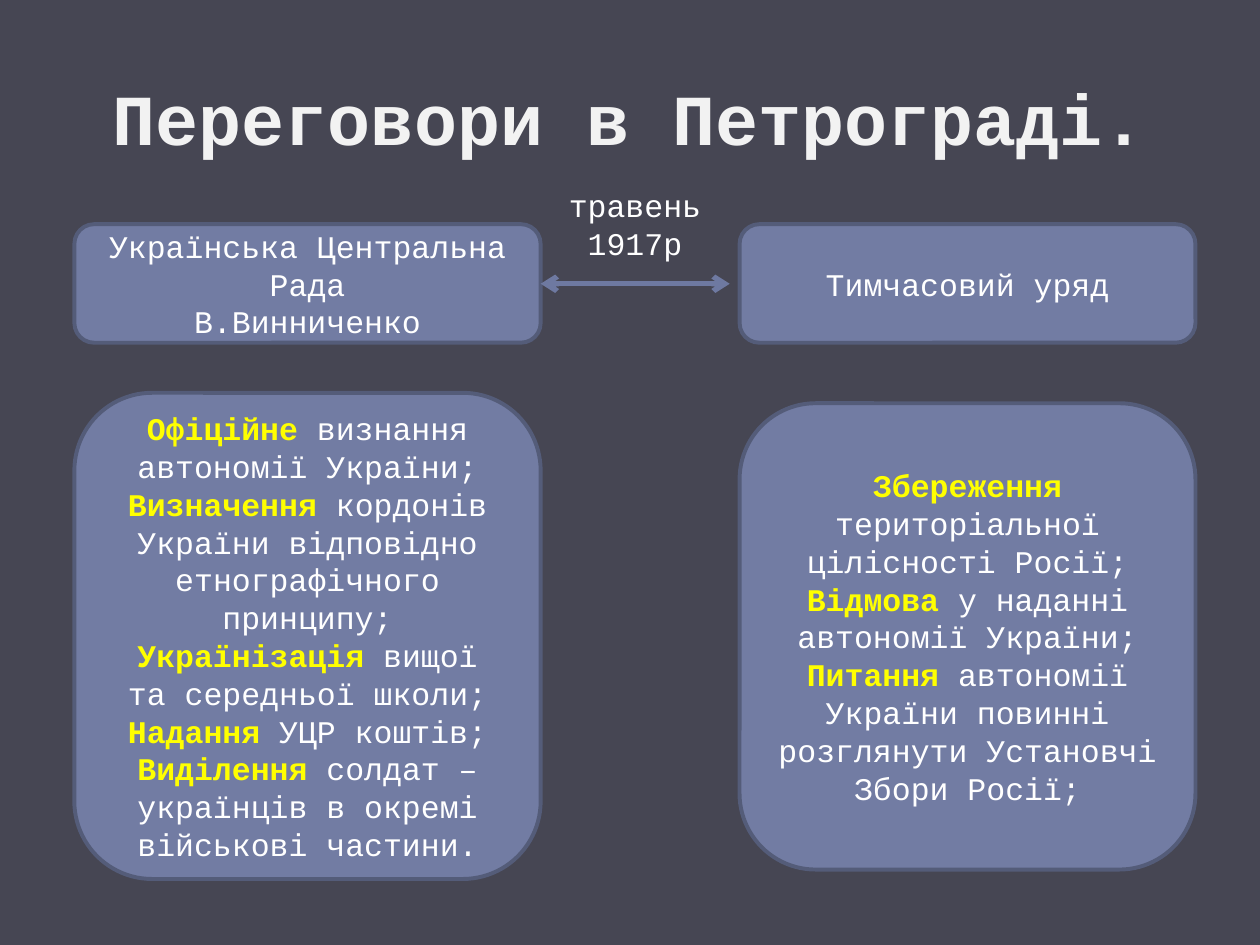
from dataclasses import dataclass

from lxml import etree
from pptx import Presentation
from pptx.dml.color import RGBColor
from pptx.enum.shapes import MSO_CONNECTOR, MSO_SHAPE
from pptx.enum.text import MSO_ANCHOR, PP_ALIGN
from pptx.oxml.ns import qn
from pptx.shapes.base import BaseShape
from pptx.slide import Slide
from pptx.util import Cm, Pt

ROUNDED = MSO_SHAPE.ROUNDED_RECTANGLE
STRAIGHT = MSO_CONNECTOR.STRAIGHT
MIDDLE = MSO_ANCHOR.MIDDLE
TOP = MSO_ANCHOR.TOP
CENTER = PP_ALIGN.CENTER

FONT = "Courier New"
BACKGROUND = "464653"
PANEL_FILL = "727CA3"
PANEL_LINE = "545C79"
ARROW = "6E79A1"
TITLE = "F2F2F2"
WHITE = "FFFFFF"
YELLOW = "FFFF00"


@dataclass(frozen=True)
class Span:
    text: str
    color: str = WHITE
    bold: bool = False
    size: float = 18


@dataclass(frozen=True)
class Area:
    left: float
    top: float
    width: float
    height: float

    def lengths(self) -> tuple[Cm, Cm, Cm, Cm]:
        return Cm(self.left), Cm(self.top), Cm(self.width), Cm(self.height)


@dataclass(frozen=True)
class Panel:
    area: Area
    lines: list[list[Span]]


def rgb(color: str) -> RGBColor:
    return RGBColor.from_string(color)


def demand(lead: str, rest: str) -> list[Span]:
    return [Span(lead, YELLOW, True), Span(rest)]


def write(box: BaseShape, lines: list[list[Span]], anchor: MSO_ANCHOR) -> None:
    frame = box.text_frame
    frame.word_wrap = True
    frame.vertical_anchor = anchor
    for index, line in enumerate(lines):
        para = frame.add_paragraph() if index else frame.paragraphs[0]
        para.alignment = CENTER
        for span in line:
            run = para.add_run()
            run.text = span.text
            run.font.name = FONT
            run.font.size = Pt(span.size)
            run.font.bold = span.bold
            run.font.color.rgb = rgb(span.color)


def add_label(page: Slide, area: Area, span: Span, anchor: MSO_ANCHOR) -> None:
    write(page.shapes.add_textbox(*area.lengths()), [[span]], anchor)


def add_panel(page: Slide, panel: Panel) -> None:
    box = page.shapes.add_shape(ROUNDED, *panel.area.lengths())
    box.shadow.inherit = False
    box.fill.solid()
    box.fill.fore_color.rgb = rgb(PANEL_FILL)
    box.line.color.rgb = rgb(PANEL_LINE)
    box.line.width = Pt(2.25)
    write(box, panel.lines, MIDDLE)


def add_double_arrow(page: Slide, start: float, end: float, height: float) -> None:
    arrow = page.shapes.add_connector(STRAIGHT, Cm(start), Cm(height), Cm(end), Cm(height))
    arrow.line.color.rgb = rgb(ARROW)
    arrow.line.width = Pt(3)
    outline = arrow.line._get_or_add_ln()
    for tip in ("a:headEnd", "a:tailEnd"):
        etree.SubElement(outline, qn(tip), type="arrow")
    etree.SubElement(arrow._element.spPr, qn("a:effectLst"))


LEFT, LEFT_WIDTH = 1.5, 9.4
RIGHT, RIGHT_WIDTH = 14.91, 9.19
PARTY_TOP, PARTY_HEIGHT = 4.52, 2.39

PANELS = [
    Panel(
        Area(LEFT, PARTY_TOP, LEFT_WIDTH, PARTY_HEIGHT),
        [[Span("Українська Центральна Рада")], [Span("В.Винниченко")]],
    ),
    Panel(
        Area(RIGHT, PARTY_TOP, RIGHT_WIDTH, PARTY_HEIGHT),
        [[Span("Тимчасовий уряд")]],
    ),
    Panel(
        Area(LEFT, 7.92, LEFT_WIDTH, 9.8),
        [
            demand("Офіційне", " визнання автономії України;"),
            demand("Визначення", " кордонів України відповідно етнографічного принципу;"),
            demand("Українізація", " вищої та середньої школи;"),
            demand("Надання", " УЦР коштів;"),
            demand("Виділення", " солдат – українців в окремі військові частини."),
        ],
    ),
    Panel(
        Area(RIGHT, 8.13, RIGHT_WIDTH, 9.4),
        [
            demand("Збереження ", "територіальної цілісності Росії;"),
            demand("Відмова ", "у наданні автономії України;"),
            demand("Питання", " автономії України повинні розглянути Установчі Збори Росії;"),
        ],
    ),
]


def main() -> None:
    deck = Presentation()
    deck.slide_width, deck.slide_height = Cm(25.4), Cm(19.05)
    page = deck.slides.add_slide(deck.slide_layouts[6])
    page.background.fill.solid()
    page.background.fill.fore_color.rgb = rgb(BACKGROUND)

    heading = Span("Переговори в Петрограді.", TITLE, True, 41)
    add_label(page, Area(1.27, 0.76, 22.86, 3.18), heading, MIDDLE)
    for panel in PANELS:
        add_panel(page, panel)
    add_double_arrow(page, LEFT + LEFT_WIDTH, 14.71, 5.72)
    add_label(page, Area(11.1, 3.63, 3.4, 1.8), Span("травень 1917р"), TOP)
    deck.save("out.pptx")


if __name__ == "__main__":
    main()
